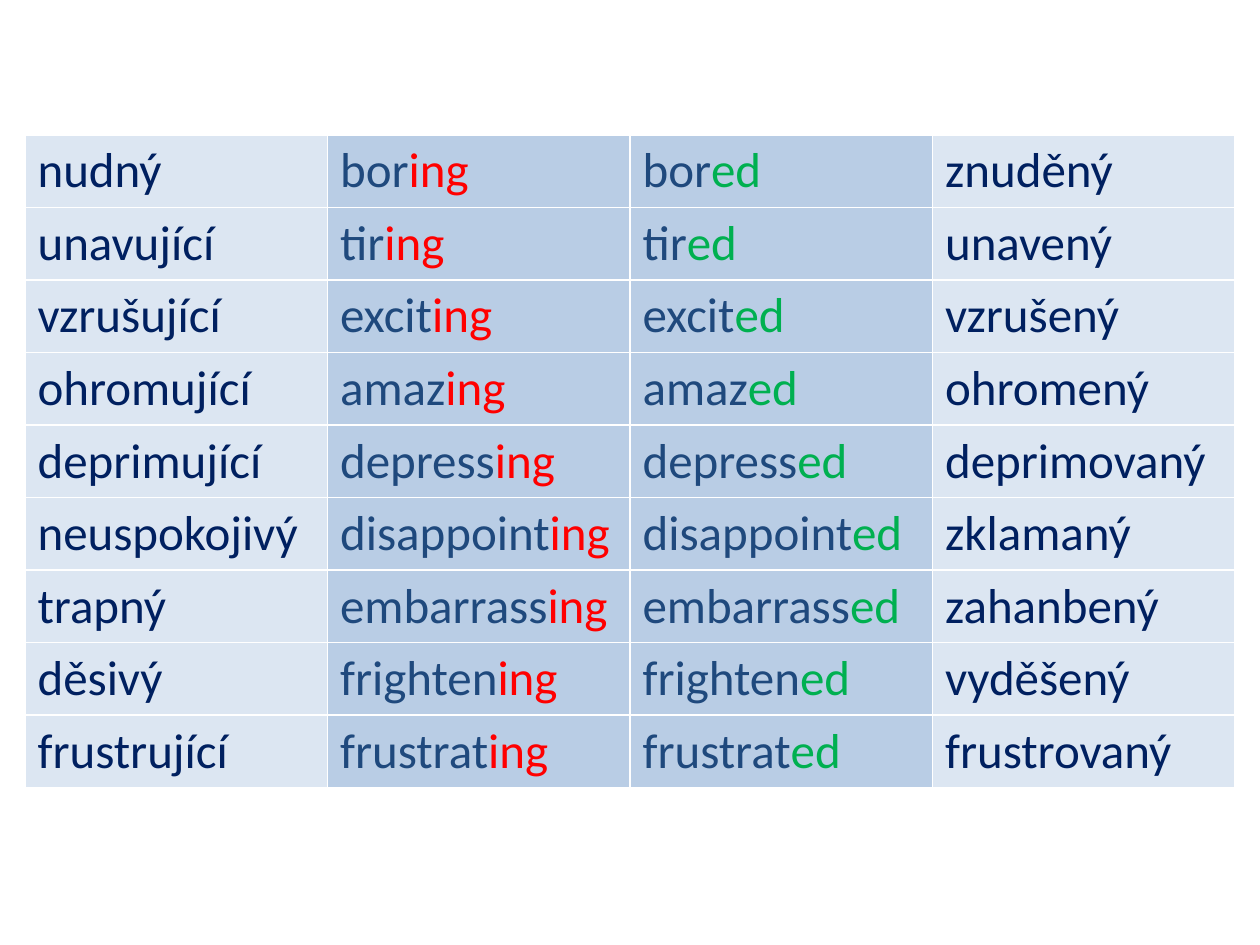
from dataclasses import dataclass
from typing import NamedTuple

from lxml import etree
from pptx import Presentation
from pptx import util as u
from pptx.dml.color import RGBColor
from pptx.oxml.ns import qn

PX_PER_INCH = 126


@dataclass(frozen=True)
class Theme:
    font: str = "Calibri"
    size: int = 28
    czech: str = "002060"
    stem: str = "1F497D"
    ing: str = "FF0000"
    ed: str = "00B050"
    czech_fill: str = "DCE6F2"
    english_fill: str = "B9CDE5"
    border: str = "FFFFFF"
    border_pt: int = 1


class Adjective(NamedTuple):
    czech_ing: str
    stem: str
    czech_ed: str


class Part(NamedTuple):
    text: str
    color: str


THEME = Theme()
ADJECTIVES = [
    Adjective("nudný", "bor", "znuděný"),
    Adjective("unavující", "tir", "unavený"),
    Adjective("vzrušující", "excit", "vzrušený"),
    Adjective("ohromující", "amaz", "ohromený"),
    Adjective("deprimující", "depress", "deprimovaný"),
    Adjective("neuspokojivý", "disappoint", "zklamaný"),
    Adjective("trapný", "embarrass", "zahanbený"),
    Adjective("děsivý", "frighten", "vyděšený"),
    Adjective("frustrující", "frustrat", "frustrovaný"),
]


def px(n: int) -> u.Emu:
    return u.Emu(round(n * 914400 / PX_PER_INCH))


def set_borders(cell) -> None:
    """Line all four sides; the lines must precede the fill in tcPr."""
    tc_pr = cell._tc.get_or_add_tcPr()
    for i, side in enumerate(("a:lnL", "a:lnR", "a:lnT", "a:lnB")):
        ln = etree.Element(qn(side), w=str(u.Pt(THEME.border_pt)))
        fill = etree.SubElement(ln, qn("a:solidFill"))
        etree.SubElement(fill, qn("a:srgbClr"), val=THEME.border)
        tc_pr.insert(i, ln)


def fill_cell(cell, parts: list[Part], fill: str) -> None:
    cell.fill.solid()
    cell.fill.fore_color.rgb = RGBColor.from_string(fill)
    set_borders(cell)
    p = cell.text_frame.paragraphs[0]
    for part in parts:
        r = p.add_run()
        r.text = part.text
        r.font.name = THEME.font
        r.font.size = u.Pt(THEME.size)
        r.font.color.rgb = RGBColor.from_string(part.color)


def add_adjective_table(s, left: int, top: int, width: int, row_height: int) -> None:
    rows = len(ADJECTIVES)
    table = s.shapes.add_table(
        rows, 4, px(left), px(top), px(width), px(row_height * rows)
    ).table
    table.first_row = False
    table.horz_banding = False
    for row, adj in zip(table.rows, ADJECTIVES):
        stem = Part(adj.stem, THEME.stem)
        columns = [
            ([Part(adj.czech_ing, THEME.czech)], THEME.czech_fill),
            ([stem, Part("ing", THEME.ing)], THEME.english_fill),
            ([stem, Part("ed", THEME.ed)], THEME.english_fill),
            ([Part(adj.czech_ed, THEME.czech)], THEME.czech_fill),
        ]
        for cell, (parts, fill) in zip(row.cells, columns):
            fill_cell(cell, parts, fill)


def main() -> None:
    prs = Presentation()
    prs.slide_width, prs.slide_height = u.Inches(10), u.Inches(7.5)
    s = prs.slides.add_slide(prs.slide_layouts[6])
    add_adjective_table(s, left=25, top=135, width=1210, row_height=71)
    prs.save("out.pptx")


if __name__ == "__main__":
    main()
